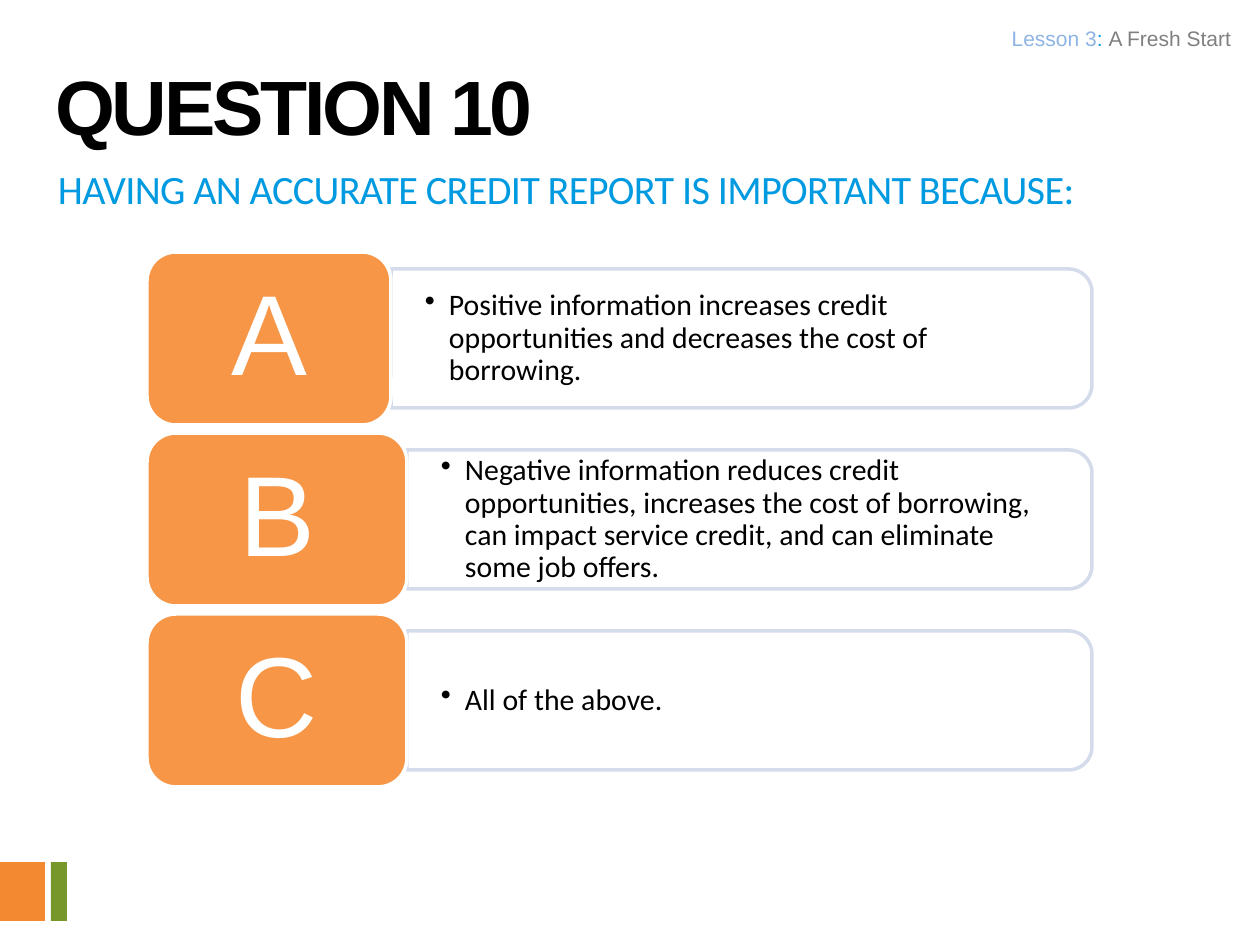
import pptx
import pptx.dml.color
import pptx.enum.shapes
import pptx.enum.text
import pptx.oxml.ns
import pptx.util
from dataclasses import dataclass
from lxml import etree

SHAPE = pptx.enum.shapes.MSO_SHAPE
ALIGN = pptx.enum.text.PP_ALIGN
ANCHOR = pptx.enum.text.MSO_ANCHOR
qn = pptx.oxml.ns.qn

PX_PER_INCH = 126


def px(n):
    return pptx.util.Emu(round(n * 914400 / PX_PER_INCH))


def rgb(color):
    return pptx.dml.color.RGBColor.from_string(color)


@dataclass(frozen=True)
class Theme:
    heading_font: str = "Arial"
    body_font: str = "Calibri"
    black: str = "000000"
    white: str = "FFFFFF"
    blue: str = "009AE1"
    light_blue: str = "8EB4E3"
    gray: str = "808080"
    orange: str = "F79646"
    panel_line: str = "D0D8E8"
    accent_orange: str = "F38A31"
    accent_green: str = "77972B"
    title_size: int = 44
    question_size: int = 23
    letter_size: int = 65
    answer_size: int = 17
    header_size: int = 12


def set_alpha(fill, percent):
    """Make a solid fill partly transparent."""
    clr = fill._xPr.find(qn("a:solidFill"))[0]
    etree.SubElement(clr, qn("a:alpha"), val=str(percent * 1000))


def add_bullet(p, indent):
    pPr = p._p.get_or_add_pPr()
    pPr.set("marL", str(px(indent)))
    pPr.set("indent", str(-px(indent)))
    etree.SubElement(pPr, qn("a:buChar"), char="•")


def write(tf, runs, *, font, size, bold=False, spacing=0, align=ALIGN.LEFT,
          anchor=ANCHOR.TOP, line_spacing=None, insets=(13, 6), bullet_indent=0):
    """Fill a text frame with one paragraph of (text, color) runs."""
    tf.word_wrap = True
    tf.vertical_anchor = anchor
    tf.margin_left = tf.margin_right = px(insets[0])
    tf.margin_top = tf.margin_bottom = px(insets[1])
    p = tf.paragraphs[0]
    p.alignment = align
    if line_spacing:
        p.line_spacing = line_spacing
    if bullet_indent:
        add_bullet(p, bullet_indent)
    for text, color in runs:
        r = p.add_run()
        r.text = text
        r.font.name = font
        r.font.size = pptx.util.Pt(size)
        r.font.bold = bold
        r.font.color.rgb = rgb(color)
        if spacing:
            r._r.get_or_add_rPr().set("spc", str(round(spacing * 100)))


class SlideBuilder:
    """Draws elements on one slide in the style of a theme."""

    def __init__(self, slide, theme):
        self.slide = slide
        self.theme = theme

    def shape(self, kind, x, y, w, h, fill, line=None):
        sp = self.slide.shapes.add_shape(kind, px(x), px(y), px(w), px(h))
        sp.shadow.inherit = False
        sp.fill.solid()
        sp.fill.fore_color.rgb = rgb(fill)
        if line:
            sp.line.color.rgb = rgb(line)
            sp.line.width = pptx.util.Pt(2)
        else:
            sp.line.fill.background()
        return sp

    def text(self, x, y, w, h, runs, **style):
        sp = self.slide.shapes.add_textbox(px(x), px(y), px(w), px(h))
        write(sp.text_frame, runs, **style)

    def panel(self, x, y, w, h):
        """Box rounded on its right side only: a top-rounded shape turned by 90°."""
        t = self.theme
        sp = self.shape(SHAPE.ROUND_2_SAME_RECTANGLE, x + (w - h) / 2,
                        y + (h - w) / 2, h, w, t.white, t.panel_line)
        sp.rotation = 90
        set_alpha(sp.fill, 90)
        set_alpha(sp.line.fill, 90)

    def answer(self, letter, text, y, letter_width):
        t = self.theme
        left, right, card_h, panel_h = 147, 1092, 173, 139
        panel_x = left + letter_width
        panel_y = y + (card_h - panel_h) / 2
        self.panel(panel_x, panel_y, right - panel_x, panel_h)
        self.text(panel_x, panel_y + 7, right - 7 - panel_x, panel_h - 14,
                  [(text, t.black)], font=t.body_font, size=t.answer_size,
                  anchor=ANCHOR.MIDDLE, line_spacing=0.9, insets=(34, 18),
                  bullet_indent=24)
        card = self.shape(SHAPE.ROUNDED_RECTANGLE, left, y, letter_width, card_h,
                          t.orange, t.white)
        write(card.text_frame, [(letter, t.white)], font=t.heading_font,
              size=t.letter_size, align=ALIGN.CENTER, anchor=ANCHOR.MIDDLE,
              line_spacing=0.9, insets=(34, 18))


def main():
    prs = pptx.Presentation()
    prs.slide_width, prs.slide_height = px(1260), px(945)
    t = Theme()
    s = SlideBuilder(prs.slides.add_slide(prs.slide_layouts[6]), t)

    for x, w, color in ((0, 45, t.accent_orange), (51, 16, t.accent_green)):
        s.shape(SHAPE.RECTANGLE, x, 862, w, 59, color)

    s.text(45, 158, 1197, 164,
           [("HAVING AN ACCURATE CREDIT REPORT IS IMPORTANT BECAUSE:", t.blue)],
           font=t.body_font, size=t.question_size, spacing=-0.4)

    answers = (
        ("A", 244, "Positive information increases credit opportunities and "
                   "decreases the cost of borrowing."),
        ("B", 260, "Negative information reduces credit opportunities, increases "
                   "the cost of borrowing, can impact service credit, and can "
                   "eliminate some job offers."),
        ("C", 260, "All of the above."),
    )
    for i, (letter, width, text) in enumerate(answers):
        s.answer(letter, text, 252 + 181 * i, width)

    s.text(504, 21, 737, 40,
           [("Lesson 3", t.light_blue), (": ", t.blue), ("A Fresh Start", t.gray)],
           font=t.heading_font, size=t.header_size, align=ALIGN.RIGHT, insets=(10, 5))
    s.text(42, 42, 1091, 105, [("QUESTION 10", t.black)], font=t.heading_font,
           size=t.title_size, bold=True, spacing=-1.8,
           line_spacing=pptx.util.Pt(59))

    prs.save("out.pptx")


if __name__ == "__main__":
    main()
